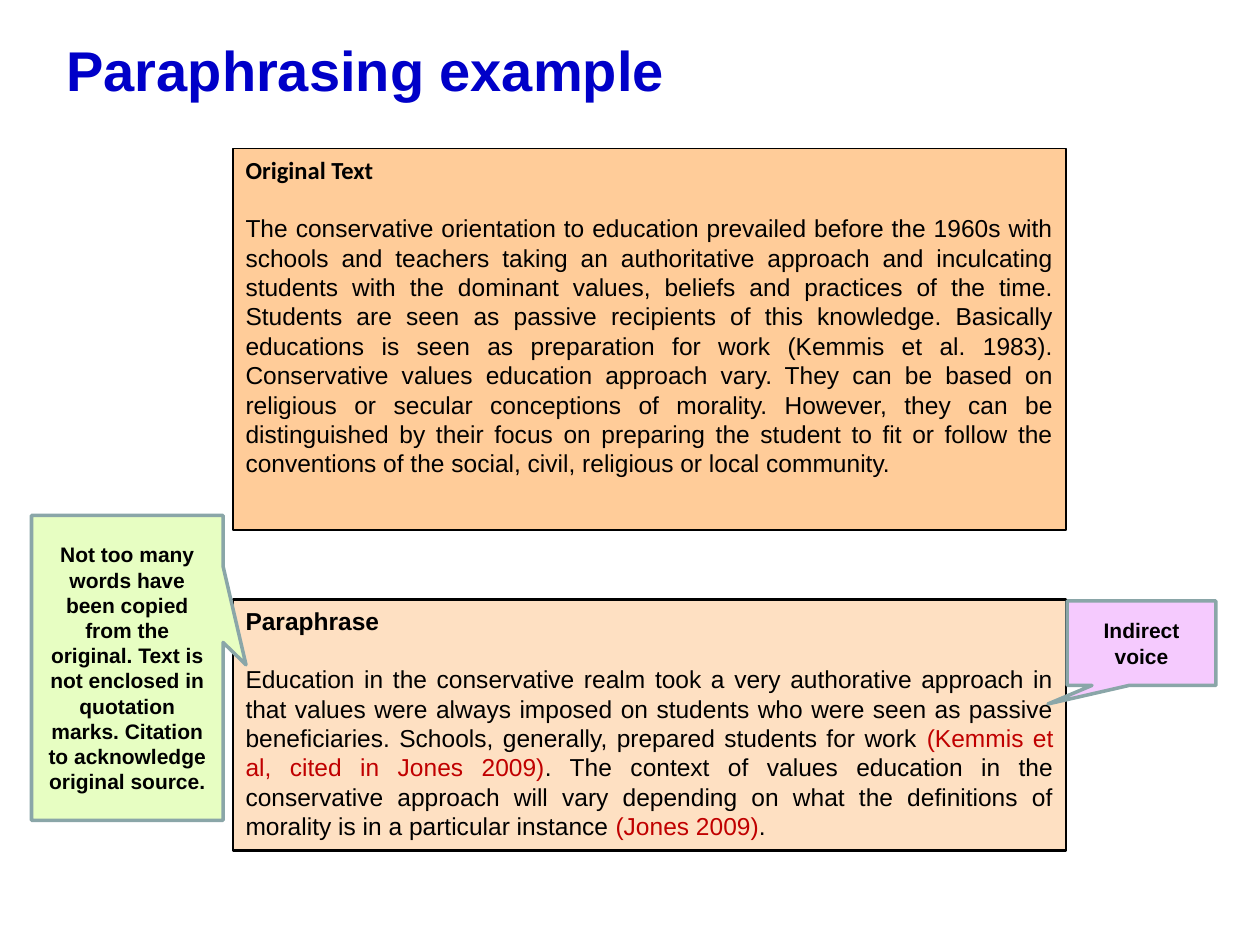
import pptx
import pptx.dml.color
import pptx.enum.shapes
import pptx.enum.text
import pptx.util

Inches, Pt = pptx.util.Inches, pptx.util.Pt
RGBColor = pptx.dml.color.RGBColor
Shape = pptx.enum.shapes.MSO_SHAPE
Align = pptx.enum.text.PP_ALIGN
Anchor = pptx.enum.text.MSO_ANCHOR

BLACK = RGBColor(0x00, 0x00, 0x00)
TITLE_BLUE = RGBColor(0x00, 0x00, 0xC8)
CITATION_RED = RGBColor(0xC0, 0x00, 0x00)
ORANGE = RGBColor(0xFF, 0xCC, 0x99)
PEACH = RGBColor(0xFE, 0xE0, 0xC2)
PINK = RGBColor(0xF5, 0xCA, 0xFE)
GREEN = RGBColor(0xE7, 0xFE, 0xC2)
GREY_TEAL = RGBColor(0x8A, 0xA6, 0xA8)

TITLE = "Paraphrasing example"

# Body runs are (text, colour) pairs.
PASSAGES = [
    {
        "heading": "Original Text", "heading_font": "Calibri",
        "top": 1.18, "height": 3.03, "fill": ORANGE, "line_width": 1,
        "body": [
            ("The conservative orientation to education prevailed before the 1960s with "
             "schools and teachers taking an authoritative approach and inculcating "
             "students with the dominant values, beliefs and practices of the time. "
             "Students are seen as passive recipients of this knowledge. Basically "
             "educations is seen as preparation for work (Kemmis et al. 1983). "
             "Conservative values education approach vary. They can be based on "
             "religious or secular conceptions of morality. However, they can be "
             "distinguished by their focus on preparing the student to fit or follow the "
             "conventions of the social, civil, religious or local community.", BLACK),
        ],
    },
    {
        "heading": "Paraphrase", "heading_font": "Arial",
        "top": 4.76, "height": 1.99, "fill": PEACH, "line_width": 1.5,
        "body": [
            ("Education in the conservative realm took a very authorative approach in "
             "that values were always imposed on students who were seen as passive "
             "beneficiaries. Schools, generally, prepared students for work ", BLACK),
            ("(Kemmis et al, cited in Jones 2009)", CITATION_RED),
            (". The context of values education in the conservative approach will vary "
             "depending on what the definitions of morality is in a particular "
             "instance ", BLACK),
            ("(Jones 2009)", CITATION_RED),
            (".", BLACK),
        ],
    },
]

# Text, (left, top, width, height), pointer tip, fill
CALLOUTS = [
    ("Indirect voice", (8.47, 4.77, 1.18, 0.67), (-0.63, 0.72), PINK),
    ("Not too many words have been copied from the original. Text is not enclosed in "
     "quotation marks. Citation to acknowledge original source.",
     (0.25, 4.09, 1.52, 2.42), (0.62, -0.01), GREEN),
]

PASSAGE_LEFT, PASSAGE_WIDTH = 1.85, 6.61


def add_run(paragraph, text, size, color=BLACK, bold=False, name="Arial"):
    run = paragraph.add_run()
    run.text = text
    run.font.color.rgb = color
    for key, value in {"size": Pt(size), "bold": bold, "name": name}.items():
        setattr(run.font, key, value)


def add_box(slide, kind, bounds, fill, line_color, line_width, anchor):
    shape = slide.shapes.add_shape(kind, *map(Inches, bounds))
    shape.shadow.inherit = False
    shape.fill.solid()
    shape.fill.fore_color.rgb = fill
    shape.line.color.rgb = line_color
    shape.line.width = Pt(line_width)
    shape.text_frame.word_wrap = True
    shape.text_frame.vertical_anchor = anchor
    return shape


def add_title(slide):
    text_box = slide.shapes.add_textbox(*map(Inches, (0.43, 0.19, 9.03, 0.71)))
    frame = text_box.text_frame
    frame.word_wrap = True
    frame.vertical_anchor = Anchor.MIDDLE
    add_run(frame.paragraphs[0], TITLE, 32, TITLE_BLUE, True)


def add_passage(slide, passage):
    bounds = (PASSAGE_LEFT, passage["top"], PASSAGE_WIDTH, passage["height"])
    box = add_box(slide, Shape.RECTANGLE, bounds, passage["fill"], BLACK,
                  passage["line_width"], Anchor.TOP)
    heading = box.text_frame.paragraphs[0]
    add_run(heading, passage["heading"], 14, bold=True, name=passage["heading_font"])
    body = box.text_frame.add_paragraph()
    body.space_before = Pt(16.5)
    for text, color in passage["body"]:
        add_run(body, text, 14, color)
    for paragraph in (heading, body):
        paragraph.alignment = Align.JUSTIFY


def add_callout(slide, text, bounds, tip, fill):
    callout = add_box(slide, Shape.RECTANGULAR_CALLOUT, bounds, fill, GREY_TEAL, 2,
                      Anchor.MIDDLE)
    for index, offset in enumerate(tip):
        callout.adjustments[index] = offset
    paragraph = callout.text_frame.paragraphs[0]
    paragraph.alignment = Align.CENTER
    add_run(paragraph, text, 12, bold=True)


def main():
    presentation = pptx.Presentation()
    presentation.slide_width, presentation.slide_height = Inches(10), Inches(7.5)
    slide = presentation.slides.add_slide(presentation.slide_layouts[6])
    add_title(slide)
    for passage in PASSAGES:
        add_passage(slide, passage)
    for callout in CALLOUTS:
        add_callout(slide, *callout)
    presentation.save("out.pptx")


if __name__ == "__main__":
    main()
